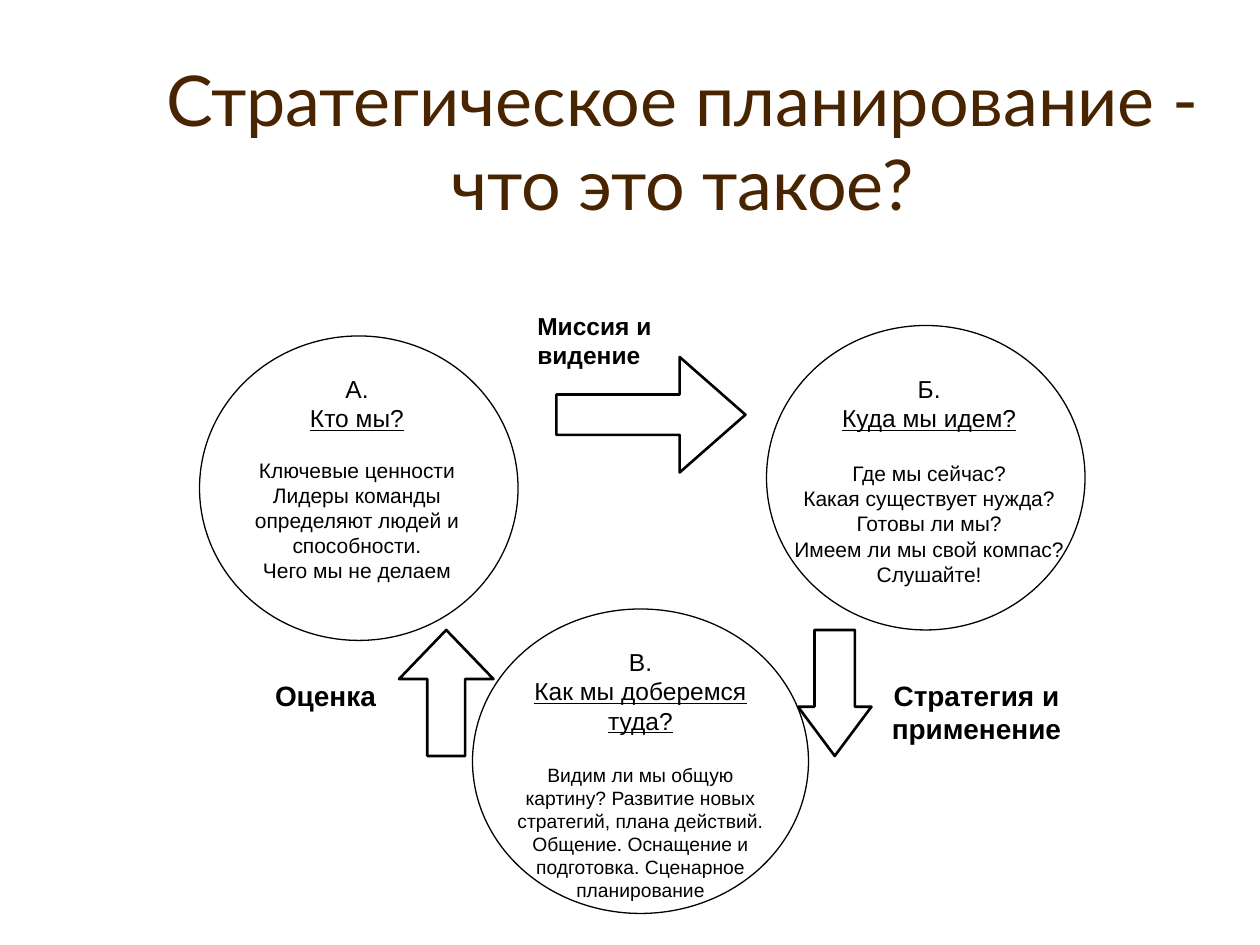
from pptx import Presentation
from pptx.dml.color import RGBColor
from pptx.enum.shapes import MSO_SHAPE
from pptx.enum.text import MSO_ANCHOR, PP_ALIGN
from pptx.util import Pt

OVAL = MSO_SHAPE.OVAL
RIGHT, DOWN, UP = MSO_SHAPE.RIGHT_ARROW, MSO_SHAPE.DOWN_ARROW, MSO_SHAPE.UP_ARROW
LEFT, CENTER = PP_ALIGN.LEFT, PP_ALIGN.CENTER
TOP, BOTTOM = MSO_ANCHOR.TOP, MSO_ANCHOR.BOTTOM


def color(value):
    return RGBColor.from_string(value)


def place(sp, box):
    sp.left, sp.top, sp.width, sp.height = map(Pt, box)


def write(tf, text, first=False, size=12, font="Arial", fill="000000",
          bold=False, underline=False, align=CENTER, before=0):
    p = tf.paragraphs[0] if first else tf.add_paragraph()
    p.alignment = align
    p.space_before = Pt(before)
    r = p.add_run()
    r.text = text
    r.font.size, r.font.name = Pt(size), font
    r.font.bold, r.font.underline = bold, underline
    r.font.color.rgb = color(fill)


def add_frame(s, box):
    tf = s.shapes.add_textbox(*map(Pt, box)).text_frame
    tf.word_wrap = True
    tf.vertical_anchor = TOP
    return tf


def add_outline(s, kind, box, weight, adjustments=()):
    sp = s.shapes.add_shape(kind, *map(Pt, box))
    sp.shadow.inherit = False
    sp.fill.background()
    sp.line.color.rgb = color("000000")
    sp.line.width = Pt(weight)
    for i, value in enumerate(adjustments):
        sp.adjustments[i] = value


def add_title(s, box, text):
    sp = s.shapes.title
    place(sp, box)
    sp.text_frame.word_wrap = True
    sp.text_frame.vertical_anchor = BOTTOM
    write(sp.text_frame, text, first=True, size=40, font="Lato", fill="482400")


def add_stage(s, box, letter, question, lines, size, gap):
    tf = add_frame(s, box)
    write(tf, letter, first=True, size=14)
    write(tf, question, size=14, underline=True)
    for i, line in enumerate(lines):
        write(tf, line, size=size, before=0 if i else gap)


def add_label(s, box, lines, size, align=CENTER):
    tf = add_frame(s, box)
    for i, line in enumerate(lines):
        write(tf, line, first=i == 0, size=size, bold=True, align=align)


CIRCLES = [(114, 192, 182, 174), (438, 186, 182, 174), (270, 348, 192, 174)]
STAGES = [
    ((120, 210, 168, 126), "А.", "Кто мы?",
     ["Ключевые ценности", "Лидеры команды определяют людей и способности.",
      "Чего мы не делаем"], 12, 14),
    ((444, 210, 174, 126), "Б.", "Куда мы идем?",
     ["Где мы сейчас?", "Какая существует нужда?", "Готовы ли мы?",
      "Имеем ли мы свой компас?", "Слушайте!"], 12, 16),
    ((282, 366, 168, 138), "В.", "Как мы доберемся туда?",
     ["Видим ли мы общую картину? Развитие новых стратегий, плана действий. "
      "Общение. Оснащение и подготовка. Сценарное планирование"], 11, 16),
]
ARROWS = [
    (RIGHT, (318, 204, 108, 66), (0.35, 0.57)),
    (DOWN, (456, 360, 42, 72), (0.55, 0.67)),
    (UP, (228, 360, 54, 72), (0.4, 0.52)),
]
LABELS = [
    ((300, 174, 102, 42), ["Миссия и", "видение"], 14, LEFT),
    ((486, 384, 144, 46), ["Стратегия и применение"], 16, CENTER),
    ((114, 384, 144, 27), ["Оценка"], 16, CENTER),
]


def main():
    prs = Presentation()
    prs.slide_width, prs.slide_height = Pt(720), Pt(540)
    s = prs.slides.add_slide(prs.slide_layouts[5])
    add_title(s, (84, 12, 612, 120), "Стратегическое планирование - что это такое?")
    for box in CIRCLES:
        add_outline(s, OVAL, box, 0.75)
    for stage in STAGES:
        add_stage(s, *stage)
    for kind, box, adjustments in ARROWS:
        add_outline(s, kind, box, 1.5, adjustments)
    for label in LABELS:
        add_label(s, *label)
    prs.save("out.pptx")


if __name__ == "__main__":
    main()
